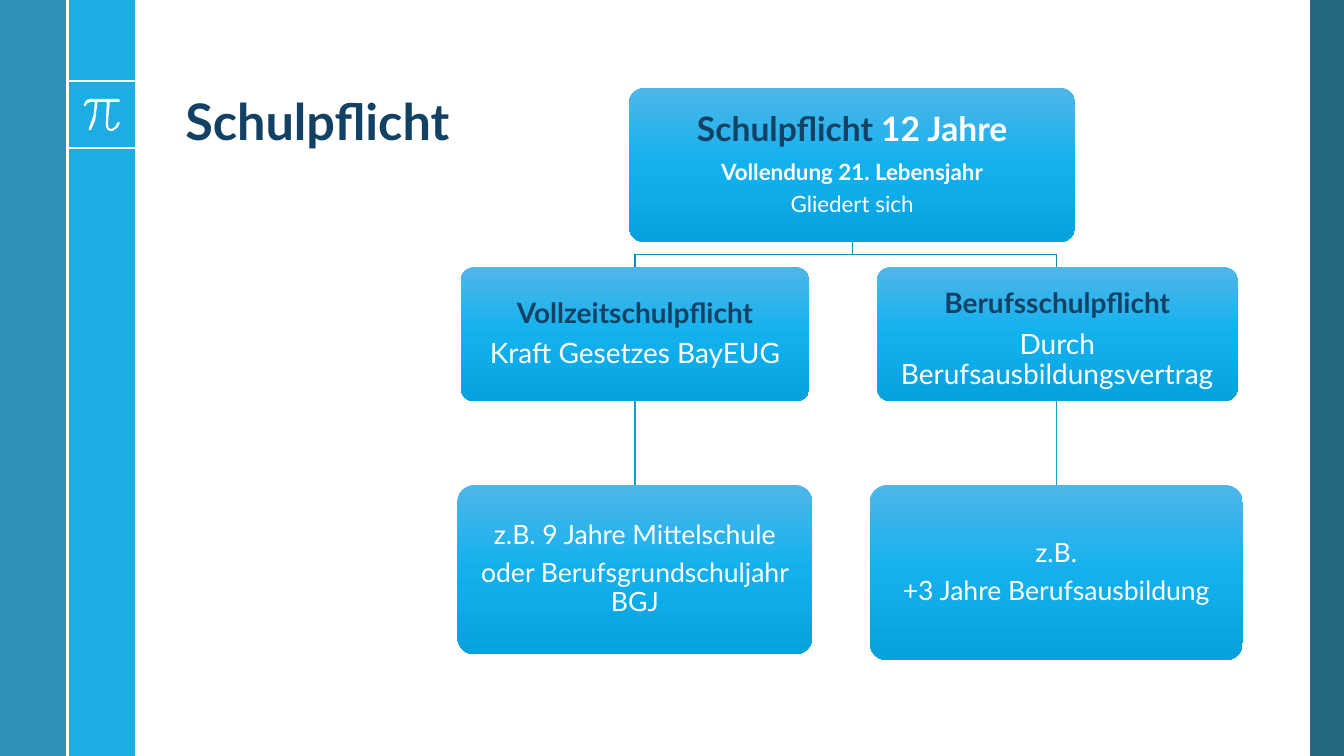
import copy

import pptx
import pptx.dml.color
import pptx.enum.shapes
import pptx.enum.text
import pptx.oxml.ns
import pptx.util
from pptx.util import Cm, Pt

RGBColor = pptx.dml.color.RGBColor
Shape = pptx.enum.shapes.MSO_SHAPE
Anchor = pptx.enum.text.MSO_ANCHOR
qn = pptx.oxml.ns.qn

FONT = "Lato"
WHITE = RGBColor(0xFF, 0xFF, 0xFF)
NAVY = RGBColor(0x13, 0x41, 0x63)
BAND_LEFT = RGBColor(0x14, 0x82, 0xAC)
BAND_MIDDLE = RGBColor(0x1C, 0xAD, 0xE4)
BAND_RIGHT = RGBColor(0x0E, 0x57, 0x72)
BRANCH = RGBColor(0x16, 0x8B, 0xB7)
STEM = RGBColor(0x19, 0x9D, 0xCF)
GRADIENT = [
    (0, RGBColor(0x4F, 0xB6, 0xE9)),
    (0.5, RGBColor(0x12, 0xB1, 0xEE)),
    (1, RGBColor(0x06, 0xA2, 0xDD)),
]
PI_OUTLINE = [
    (300, 249), (229, 249), (218, 252), (211, 264), (213, 267), (216, 267),
    (220, 260), (229, 257), (239, 257), (236, 290), (224, 323), (224, 328),
    (229, 328), (240, 303), (246, 257), (269, 257), (267, 310), (267, 320),
    (272, 328), (279, 330), (284, 330), (296, 322), (302, 310), (300, 307),
    (295, 310), (291, 319), (282, 325), (274, 323), (272, 310), (277, 257),
    (300, 257), (302, 254),
]


def add_band(s, left, width, color, alpha=100):
    """Add a full-height vertical band with the given opacity in percent."""
    sp = s.shapes.add_shape(Shape.RECTANGLE, Cm(left), 0, Cm(width), Cm(19.05))
    sp.shadow.inherit = False
    sp.line.fill.background()
    sp.fill.solid()
    sp.fill.fore_color.rgb = color
    if alpha < 100:
        clr = sp._element.spPr.find(".//" + qn("a:srgbClr"))
        clr.makeelement(qn("a:alpha"))
        alpha_el = clr.makeelement(qn("a:alpha"), {"val": str(alpha * 1000)})
        clr.append(alpha_el)


def add_line(s, x1, y1, x2, y2, color, width):
    """Add a straight line without shadow."""
    straight = pptx.enum.shapes.MSO_CONNECTOR.STRAIGHT
    c = s.shapes.add_connector(straight, Cm(x1), Cm(y1), Cm(x2), Cm(y2))
    c.line.color.rgb = color
    c.line.width = Pt(width)
    spPr = c._element.spPr
    spPr.append(spPr.makeelement(qn("a:effectLst")))


def add_pi(s):
    """Add the white pi sign in the side band."""
    fb = s.shapes.build_freeform(*PI_OUTLINE[0], scale=Cm(0.01))
    fb.add_line_segments(PI_OUTLINE[1:], close=True)
    sp = fb.convert_to_shape()
    sp.shadow.inherit = False
    sp.line.fill.background()
    sp.fill.solid()
    sp.fill.fore_color.rgb = WHITE


def format_run(r, size, color, bold):
    """Set the font of a run."""
    r.font.name = FONT
    r.font.size = Pt(size)
    r.font.color.rgb = color
    r.font.bold = bold


def add_title(s, text):
    """Add the slide title."""
    sp = s.shapes.add_textbox(Cm(4.42), Cm(0.48), Cm(27.18), Cm(3.45))
    tf = sp.text_frame
    tf.word_wrap = True
    tf.vertical_anchor = Anchor.BOTTOM
    tf.text = text
    p = tf.paragraphs[0]
    p.line_spacing = 0.9
    format_run(p.runs[0], 36, NAVY, True)


def fill_gradient(sp):
    """Fill a shape with the vertical three-stop gradient."""
    sp.fill.gradient()
    sp.fill.gradient_angle = 270
    stops = sp._element.spPr.find(".//" + qn("a:gsLst"))
    stops.append(copy.deepcopy(stops[0]))
    for stop, (position, color) in zip(sp.fill.gradient_stops, GRADIENT):
        stop.position = position
        stop.color.rgb = color


def add_box(s, left, top, width, height, lines, margins=(0.33, 0.33)):
    """Add a rounded box; each line is a size and a list of runs."""
    sp = s.shapes.add_shape(
        Shape.ROUNDED_RECTANGLE, Cm(left), Cm(top), Cm(width), Cm(height))
    sp.adjustments[0] = 0.1
    sp.shadow.inherit = False
    sp.line.fill.background()
    fill_gradient(sp)
    tf = sp.text_frame
    tf.word_wrap = True
    tf.vertical_anchor = Anchor.MIDDLE
    tf.margin_left = tf.margin_right = Cm(0.33)
    tf.margin_top, tf.margin_bottom = map(Cm, margins)
    for i, (size, runs) in enumerate(lines):
        p = tf.add_paragraph() if i else tf.paragraphs[0]
        p.alignment = pptx.enum.text.PP_ALIGN.CENTER
        p.line_spacing = 0.9
        p.space_after = Pt(0.35 * size)
        for text, color, bold in runs:
            r = p.add_run()
            r.text = text
            format_run(r, size, color, bold)


def main():
    """Build the slide and save it."""
    prs = pptx.Presentation()
    prs.slide_width, prs.slide_height = Cm(33.87), Cm(19.05)
    s = prs.slides.add_slide(prs.slide_layouts[6])

    add_band(s, 33.02, 0.85, BAND_RIGHT, 90)
    add_band(s, 1.7, 1.7, BAND_MIDDLE)
    add_band(s, 0, 1.7, BAND_LEFT, 88)
    for y in (2.05, 3.73):
        add_line(s, 1.7, y, 3.4, y, WHITE, 1.5)
    add_pi(s)
    add_line(s, 1.7, 0, 1.7, 19.05, WHITE, 1.5)
    add_title(s, "Schulpflicht")

    root_x, left_x, right_x = 21.48, 16, 26.63
    add_line(s, root_x, 6.1, root_x, 6.41, BRANCH, 1)
    add_line(s, left_x, 6.41, right_x, 6.41, BRANCH, 1)
    for x in (left_x, right_x):
        add_line(s, x, 6.41, x, 6.73, BRANCH, 1)
        add_line(s, x, 10.11, x, 12.22, STEM, 1)

    add_box(s, 15.85, 2.21, 11.25, 3.89, [
        (24, [("Schulpflicht ", NAVY, True), ("12 Jahre", WHITE, True)]),
        (16, [("Vollendung 21. Lebensjahr", WHITE, True)]),
        (16, [("Gliedert sich", WHITE, False)]),
    ])
    add_box(s, 11.61, 6.73, 8.79, 3.38, [
        (20, [("Vollzeitschulpflicht", NAVY, True)]),
        (20, [("Kraft Gesetzes BayEUG", WHITE, False)]),
    ])
    add_box(s, 11.53, 12.22, 8.94, 4.27, [
        (19, [("z.B. 9 Jahre Mittelschule", WHITE, False)]),
        (19, [("oder Berufsgrundschuljahr BGJ", WHITE, False)]),
    ])
    add_box(s, 22.1, 6.73, 9.09, 3.38, [
        (20, [("Berufsschulpflicht", NAVY, True)]),
        (20, [("Durch Berufsausbildungsvertrag", WHITE, False)]),
    ], margins=(0.5, 0.2))
    add_box(s, 21.92, 12.22, 9.4, 4.42, [
        (19, [("z.B.", WHITE, False)]),
        (19, [("+3 Jahre Berufsausbildung", WHITE, False)]),
    ])
    prs.save("out.pptx")


if __name__ == "__main__":
    main()
